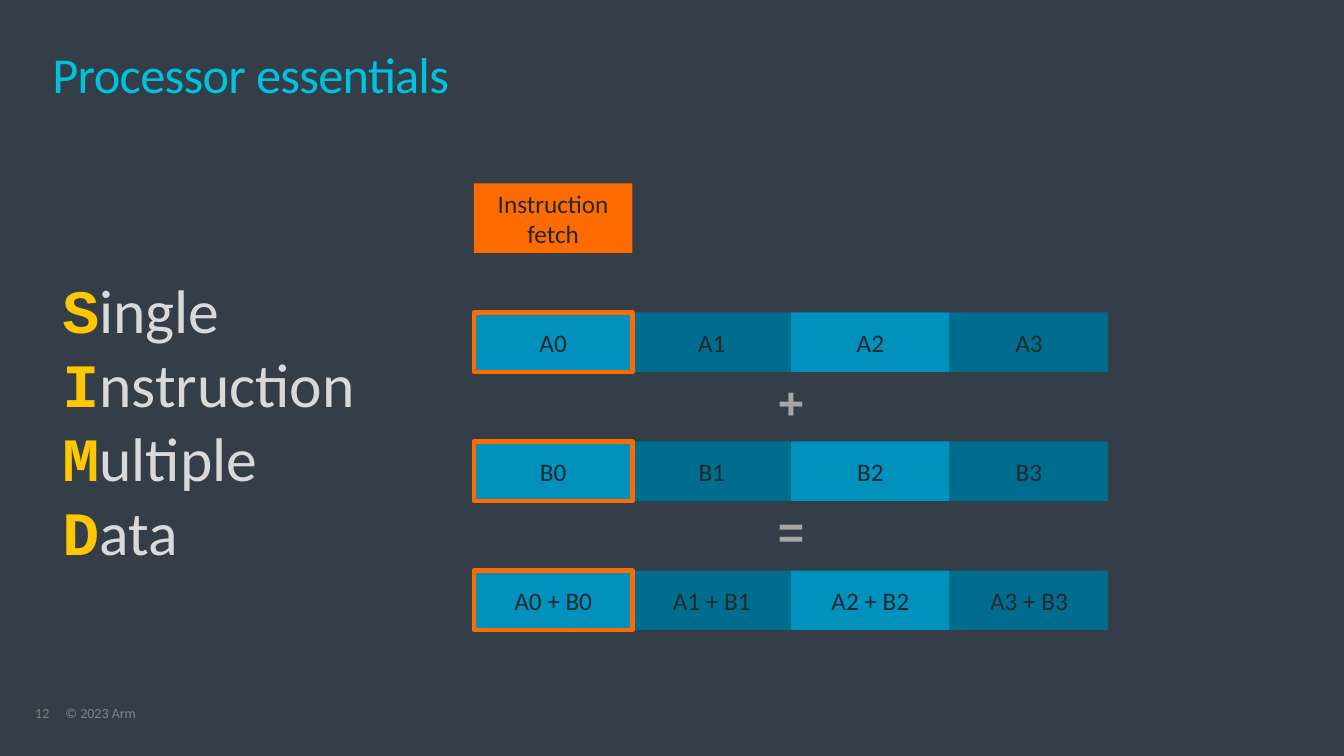
from dataclasses import dataclass

from pptx import Presentation
from pptx.dml.color import RGBColor
from pptx.enum.shapes import MSO_SHAPE as Shape
from pptx.enum.text import MSO_ANCHOR as Anchor, PP_ALIGN as Align
from pptx.util import Inches, Pt


@dataclass(frozen=True)
class Theme:
    background: str = "333E48"
    title: str = "00C1DE"
    dark_text: str = "21292F"
    light_text: str = "D9D9D9"
    initial: str = "FFC700"
    operator: str = "A6A6A6"
    page_number: str = "7F7F7F"
    copyright: str = "7D868C"
    accent: str = "FF6B00"
    lanes: tuple = ("0091BD", "006D8E")
    body_font: str = "Calibri"
    code_font: str = "Courier New"
    title_size: int = 36
    acronym_size: int = 44
    operator_size: int = 32
    label_size: int = 18
    footer_size: int = 10


theme = Theme()


def style(span, size, color, font=theme.body_font, bold=False):
    span.font.size = Pt(size)
    span.font.name = font
    span.font.bold = bold
    span.font.color.rgb = RGBColor.from_string(color)


def add_block(left, top, width, height, fill=None, line=None, text=""):
    """Add a rectangle with an optional fill, outline and centred label."""
    block = slide.shapes.add_shape(
        Shape.RECTANGLE, Inches(left), Inches(top), Inches(width), Inches(height))
    block.shadow.inherit = False
    if fill:
        block.fill.solid()
        block.fill.fore_color.rgb = RGBColor.from_string(fill)
    else:
        block.fill.background()
    if line:
        block.line.color.rgb = RGBColor.from_string(line)
        block.line.width = Pt(3)
    else:
        block.line.fill.background()
    if text:
        block.text_frame.text = text
        block.text_frame.vertical_anchor = Anchor.MIDDLE
        para = block.text_frame.paragraphs[0]
        para.alignment = Align.CENTER
        for span in para.runs:
            style(span, theme.label_size, theme.dark_text)


deck = Presentation()
deck.slide_width, deck.slide_height = Inches(13.33), Inches(7.5)
slide = deck.slides.add_slide(deck.slide_layouts[5])
slide.background.fill.solid()
slide.background.fill.fore_color.rgb = RGBColor.from_string(theme.background)

# Footer
footers = [(0.35, 0.34, "12", theme.page_number),
           (0.65, 5.07, "© 2023 Arm", theme.copyright)]
for left, width, text, color in footers:
    box = slide.shapes.add_textbox(Inches(left), Inches(7.01), Inches(width), Inches(0.15))
    frame = box.text_frame
    frame.word_wrap = True
    frame.margin_left = frame.margin_right = frame.margin_top = frame.margin_bottom = 0
    frame.text = text
    frame.paragraphs[0].line_spacing = 0.9
    style(frame.paragraphs[0].runs[0], theme.footer_size, color)

# Title
title = slide.shapes.title
title.left, title.top = Inches(0.52), Inches(0.52)
title.width, title.height = Inches(12.28), Inches(0.57)
frame = title.text_frame
frame.margin_left = frame.margin_right = frame.margin_top = frame.margin_bottom = 0
frame.vertical_anchor = Anchor.TOP
frame.text = "Processor essentials"
para = frame.paragraphs[0]
para.alignment = Align.LEFT
para.line_spacing = 0.85
style(para.runs[0], theme.title_size, theme.title)
para.runs[0].font._element.set("spc", "-50")

# Acronym
box = slide.shapes.add_textbox(Inches(0.52), Inches(1.82), Inches(3.25), Inches(4.69))
box.text_frame.word_wrap = True
box.text_frame.vertical_anchor = Anchor.MIDDLE
para = box.text_frame.paragraphs[0]
for index, word in enumerate(["Single", "Instruction", "Multiple", "Data"]):
    if index:
        para.add_line_break()
    initial, rest = para.add_run(), para.add_run()
    initial.text, rest.text = word[0], word[1:]
    style(initial, theme.acronym_size, theme.initial, theme.code_font, bold=True)
    style(rest, theme.acronym_size, theme.light_text)

# Vector lanes
grid_left, grid_top = 4.7, 3.1
lane_width, lane_height, row_step = 1.573, 0.59, 1.28
rows = ["A{0}", "B{0}", "A{0} + B{0}"]
for row, label in enumerate(rows):
    top = grid_top + row * row_step
    for lane in range(4):
        add_block(grid_left + lane * lane_width, top, lane_width, lane_height,
                  fill=theme.lanes[lane % 2], text=label.format(lane))

# Operators between the rows
for row, symbol in enumerate("+="):
    box = slide.shapes.add_textbox(
        Inches(grid_left + 1.5 * lane_width),
        Inches(grid_top + row * row_step + lane_height),
        Inches(lane_width), Inches(lane_height))
    box.text_frame.word_wrap = True
    box.text_frame.vertical_anchor = Anchor.MIDDLE
    box.text_frame.text = symbol
    para = box.text_frame.paragraphs[0]
    para.alignment = Align.CENTER
    style(para.runs[0], theme.operator_size, theme.operator, theme.code_font, bold=True)

# Fetched instruction and the lanes it works on
add_block(grid_left, 1.82, lane_width, 0.69, fill=theme.accent, text="Instruction\vfetch")
for row in range(len(rows)):
    add_block(grid_left, grid_top + row * row_step, lane_width, lane_height,
              line=theme.accent)

deck.save("out.pptx")
